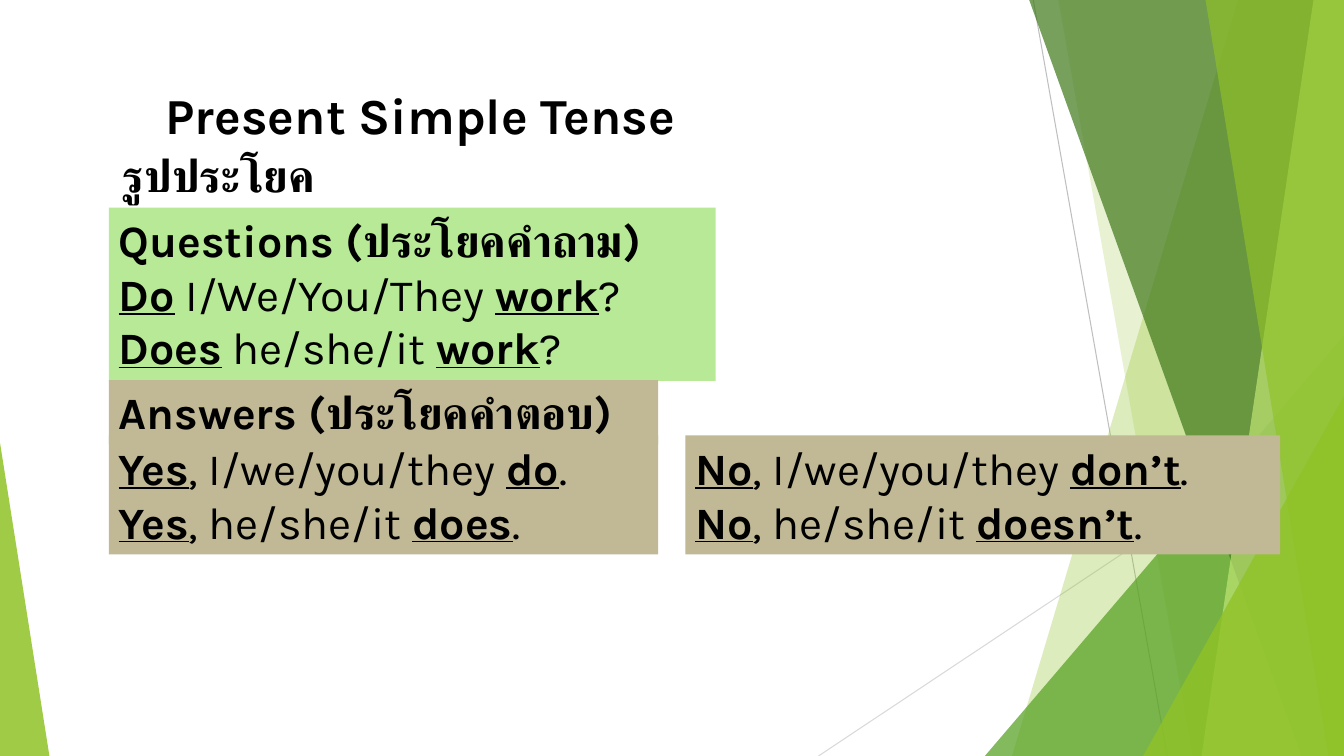
from lxml.etree import SubElement
from pptx import Presentation
from pptx.dml.color import RGBColor
from pptx.enum.shapes import MSO_CONNECTOR, MSO_SHAPE
from pptx.enum.text import MSO_AUTO_SIZE, PP_ALIGN
from pptx.oxml.ns import qn
from pptx.util import Inches, Pt

WIDTH, HEIGHT = Inches(13.333), Inches(7.5)
COLORS = {
    "text": "000000", "lime": "90C226", "leaf": "54A021", "forest": "3F7819",
    "pale": "C0E474", "steep": "BFBFBF", "shallow": "D9D9D9",
    "question": "B7E996", "answer": "C1B995",
}


def across(percent):
    return round(WIDTH * percent / 100)


def down(percent):
    return round(HEIGHT * percent / 100)


deck = Presentation()
deck.slide_width, deck.slide_height = WIDTH, HEIGHT
page = deck.slides.add_slide(deck.slide_layouts[6])

# Thin lines: start x, start y, end x (all end at the bottom edge)
for start_x, start_y, end_x, color in [
    (76.88, 0, 86.85, "steep"),
    (100, 53.73, 60.9, "shallow"),
]:
    line = page.shapes.add_connector(
        MSO_CONNECTOR.STRAIGHT, across(start_x), down(start_y), across(end_x), HEIGHT)
    line.line.color.rgb = RGBColor.from_string(COLORS[color])
    line.line.width = Pt(0.75)
    SubElement(line._element.spPr, qn("a:effectLst"))

# Facets: a band has its left edge at the top and bottom of the page,
# a triangle has its left, top, width and apex position
facets = [
    ("band", (92.1, 75.3), "lime", 30),
    ("band", (78.75, 88.73), "lime", 20),
    ("triangle", (73.28, 44.4, 26.72, 1), "leaf", 72),
    ("band", (76.58, 96.83), "forest", 70),
    ("band", (97.73, 89.4), "pale", 70),
    ("band", (89.7, 98.85), "lime", 65),
    ("triangle", (85.05, 52.4, 14.95, 1), "lime", 80),
    ("triangle", (0, 58.53, 3.68, 0), "lime", 85),
]
for kind, place, color, opacity in facets:
    if kind == "band":
        top_x, bottom_x = map(across, place)
        outline = page.shapes.build_freeform(top_x, 0)
        outline.add_line_segments([(WIDTH, 0), (WIDTH, HEIGHT), (bottom_x, HEIGHT)])
        facet = outline.convert_to_shape()
    else:
        left, top, width, apex = place
        facet = page.shapes.add_shape(
            MSO_SHAPE.ISOSCELES_TRIANGLE,
            across(left), down(top), across(width), down(100 - top))
        facet.adjustments[0] = apex
    facet.shadow.inherit = False
    facet.line.fill.background()
    facet.fill.solid()
    facet.fill.fore_color.rgb = RGBColor.from_string(COLORS[color])
    tint = facet.fill._xPr.find(qn("a:solidFill"))[0]
    SubElement(tint, qn("a:alpha"), val=str(opacity * 1000))

# Text boxes: place, fill, size, alignment, headings, then sentences
# in which the words between asterisks are bold and underlined
LEFT, ANSWER_TOP = 8.1, 57.6
boxes = [
    ((8.4, 18.93, 19.05, 8.53), None, 32, PP_ALIGN.LEFT, ["รูปประโยค"], []),
    ((9.3, 10.53, 43.95, 9.47), None, 36, PP_ALIGN.CENTER, ["Present Simple Tense"], []),
    ((LEFT, 27.47, 45.15, 22.93), "question", 32, PP_ALIGN.LEFT,
     ["Questions (ประโยคคำถาม)"],
     ["*Do* I/We/You/They *work*?", "*Does* he/she/it *work*?"]),
    ((LEFT, 50.27, 40.88, 8.53), "answer", 32, PP_ALIGN.LEFT,
     ["Answers (ประโยคคำตอบ)"], []),
    ((LEFT, ANSWER_TOP, 40.88, 15.73), "answer", 32, PP_ALIGN.LEFT, [],
     ["*Yes*, I/we/you/they *do*.", "*Yes*, he/she/it *does*."]),
    ((51, ANSWER_TOP, 44.25, 15.73), "answer", 32, PP_ALIGN.LEFT, [],
     ["*No*, I/we/you/they *don’t*.", "*No*, he/she/it *doesn’t*."]),
]
for (left, top, width, height), fill, size, alignment, headings, sentences in boxes:
    box = page.shapes.add_textbox(across(left), down(top), across(width), down(height))
    if fill:
        box.fill.solid()
        box.fill.fore_color.rgb = RGBColor.from_string(COLORS[fill])
    frame = box.text_frame
    frame.word_wrap = True
    frame.auto_size = MSO_AUTO_SIZE.SHAPE_TO_FIT_TEXT
    rows = [[(heading, True, False)] for heading in headings]
    for sentence in sentences:
        pieces = enumerate(sentence.split("*"))
        rows.append([(piece, i % 2 == 1, i % 2 == 1) for i, piece in pieces if piece])
    for number, row in enumerate(rows):
        paragraph = frame.add_paragraph() if number else frame.paragraphs[0]
        paragraph.alignment = alignment
        for words, bold, underline in row:
            span = paragraph.add_run()
            span.text = words
            style = {"name": "Karla", "size": Pt(size), "bold": bold, "underline": underline}
            for key, value in style.items():
                setattr(span.font, key, value)
            span.font.color.rgb = RGBColor.from_string(COLORS["text"])

deck.save("out.pptx")
